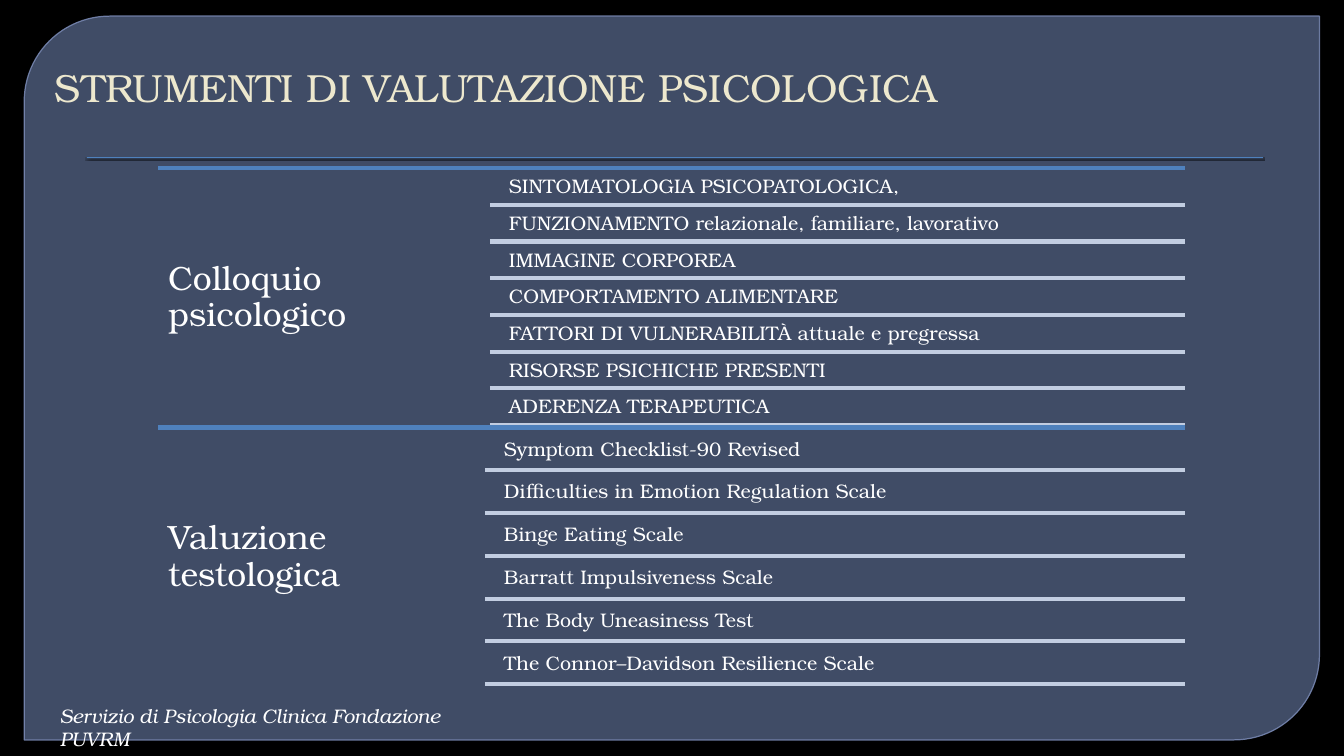
from pptx import Presentation
from pptx import util as u
from pptx.dml.color import RGBColor
from pptx.enum import shapes, text
from pptx.oxml import parse_xml
from pptx.oxml.ns import nsdecls, qn
from lxml import etree

FONT = "TeX Gyre Bonum"
BLACK = RGBColor(0x00, 0x00, 0x00)
WHITE = RGBColor(0xFF, 0xFF, 0xFF)
CREAM = RGBColor(0xED, 0xE8, 0xCE)
SLATE = RGBColor(0x63, 0x75, 0x9D)
SLATE_EDGE = RGBColor(0x79, 0x89, 0xB3)
BLUE = RGBColor(0x4F, 0x81, 0xBD)
PALE_BLUE = RGBColor(0xC2, 0xCD, 0xE1)

# Heading, left edge of the rules, top, row pitch, rows
SECTIONS = [
    ("Colloquio psicologico", 350, 120.2, 26.2, [
        "SINTOMATOLOGIA PSICOPATOLOGICA,",
        "FUNZIONAMENTO relazionale, familiare, lavorativo",
        "IMMAGINE CORPOREA",
        "COMPORTAMENTO ALIMENTARE",
        "FATTORI DI VULNERABILITÀ attuale e pregressa",
        "RISORSE PSICHICHE PRESENTI",
        "ADERENZA TERAPEUTICA",
    ]),
    ("Valuzione testologica", 346.4, 305.4, 30.55, [
        "Symptom Checklist-90 Revised",
        "Difficulties in Emotion Regulation Scale",
        "Binge Eating Scale",
        "Barratt Impulsiveness Scale",
        "The Body Uneasiness Test",
        "The Connor–Davidson Resilience Scale",
    ]),
]
LEFT, RIGHT = 113, 846.5
SECTION_HEIGHT = 185.2
ROW_GAP, ROW_INDENT = 1.3, 9.4


class SlideBuilder:
    """Holds the slide and its style; all lengths are in points."""

    def __init__(self, slide):
        self.slide = slide
        self.shapes = slide.shapes

    def background(self, color):
        fill = self.slide.background.fill
        fill.solid()
        fill.fore_color.rgb = color

    def set_wording(self, frame, wording, size, color=WHITE, italic=False):
        frame.text = wording
        frame.word_wrap = True
        paragraph = frame.paragraphs[0]
        paragraph.alignment = text.PP_ALIGN.LEFT
        font = paragraph.runs[0].font
        font.name, font.size, font.italic = FONT, u.Pt(size), italic
        font.color.rgb = color
        return paragraph

    def title(self, box, wording, size, color, indent):
        title = self.shapes.title
        title.left, title.top, title.width, title.height = map(u.Pt, box)
        paragraph = self.set_wording(title.text_frame, wording, size, color)
        title.text_frame.vertical_anchor = text.MSO_ANCHOR.MIDDLE
        properties = paragraph._p.get_or_add_pPr()
        properties.set("marL", str(u.Pt(indent)))
        properties.set("indent", "0")
        # Bring the title in front of the backdrop
        self.shapes._spTree.append(title._element)

    def shape(self, kind, box, color):
        shape = self.shapes.add_shape(kind, *map(u.Pt, box))
        shape.shadow.inherit = False
        shape.fill.solid()
        shape.fill.fore_color.rgb = color
        shape.line.fill.background()
        return shape

    def panel(self, box, color, edge):
        panel = self.shape(shapes.MSO_SHAPE.ROUND_2_DIAG_RECTANGLE, box, color)
        panel.adjustments[0], panel.adjustments[1] = 0.118, 0
        panel.line.color.rgb = edge
        panel.line.width = u.Pt(0.87)
        properties = panel._element.spPr
        outline = properties.find(qn("a:ln"))
        for part, percent in ((properties, 65), (outline, 88)):
            tint = part.find(qn("a:solidFill"))[0]
            etree.SubElement(tint, qn("a:alpha")).set("val", str(percent * 1000))

    def shadowed_rule(self, box, color):
        rule = self.shape(shapes.MSO_SHAPE.RECTANGLE, box, color)
        effects = rule._element.spPr.find(qn("a:effectLst"))
        effects.append(parse_xml(
            f'<a:outerShdw {nsdecls("a")} blurRad="12700" dist="12700" dir="5400000">'
            '<a:srgbClr val="000000"><a:alpha val="75000"/></a:srgbClr></a:outerShdw>'))

    def rule(self, left, right, y, color):
        rule = self.shapes.add_connector(
            shapes.MSO_CONNECTOR.STRAIGHT, *map(u.Pt, (left, y, right, y)))
        rule.line.color.rgb = color
        rule.line.width = u.Pt(3)
        etree.SubElement(rule._element.spPr, qn("a:effectLst"))

    def label(self, box, wording, size, inset):
        frame = self.shapes.add_textbox(*map(u.Pt, box)).text_frame
        frame.margin_left = frame.margin_right = u.Pt(inset)
        frame.margin_top = frame.margin_bottom = u.Pt(inset)
        frame.vertical_anchor = text.MSO_ANCHOR.MIDDLE
        self.set_wording(frame, wording, size).line_spacing = 0.9

    def note(self, box, wording, size):
        frame = self.shapes.add_textbox(*map(u.Pt, box)).text_frame
        self.set_wording(frame, wording, size, italic=True)

    def section(self, heading, left, top, pitch, rows):
        self.rule(LEFT, RIGHT, top, BLUE)
        self.label((LEFT, top, left - LEFT, SECTION_HEIGHT), heading, 24, 7.2)
        row_left, row_height = left + ROW_INDENT, pitch - ROW_GAP
        for index, wording in enumerate(rows):
            row_top = top + ROW_GAP + index * pitch
            self.label((row_left, row_top, RIGHT - row_left, row_height), wording, 14, 4.2)
            self.rule(left, RIGHT, row_top + row_height, PALE_BLUE)


def main():
    deck = Presentation()
    deck.slide_width, deck.slide_height = u.Pt(960), u.Pt(540)
    builder = SlideBuilder(deck.slides.add_slide(deck.slide_layouts[5]))

    # Backdrop
    builder.background(BLACK)
    builder.panel((17.3, 11.5, 925.2, 517), SLATE, SLATE_EDGE)
    builder.shadowed_rule((62, 112.2, 840.2, 0.7), BLUE)

    # Title
    builder.title((27.4, 17.3, 918.7, 90), "STRUMENTI DI VALUTAZIONE PSICOLOGICA",
                  28, CREAM, 4.3)

    # Assessment tools
    for section in SECTIONS:
        builder.section(*section)

    # Footer
    builder.note((35.6, 499, 324.7, 24.5),
                 "Servizio di Psicologia Clinica Fondazione PUVRM", 14)

    deck.save("out.pptx")


if __name__ == "__main__":
    main()
